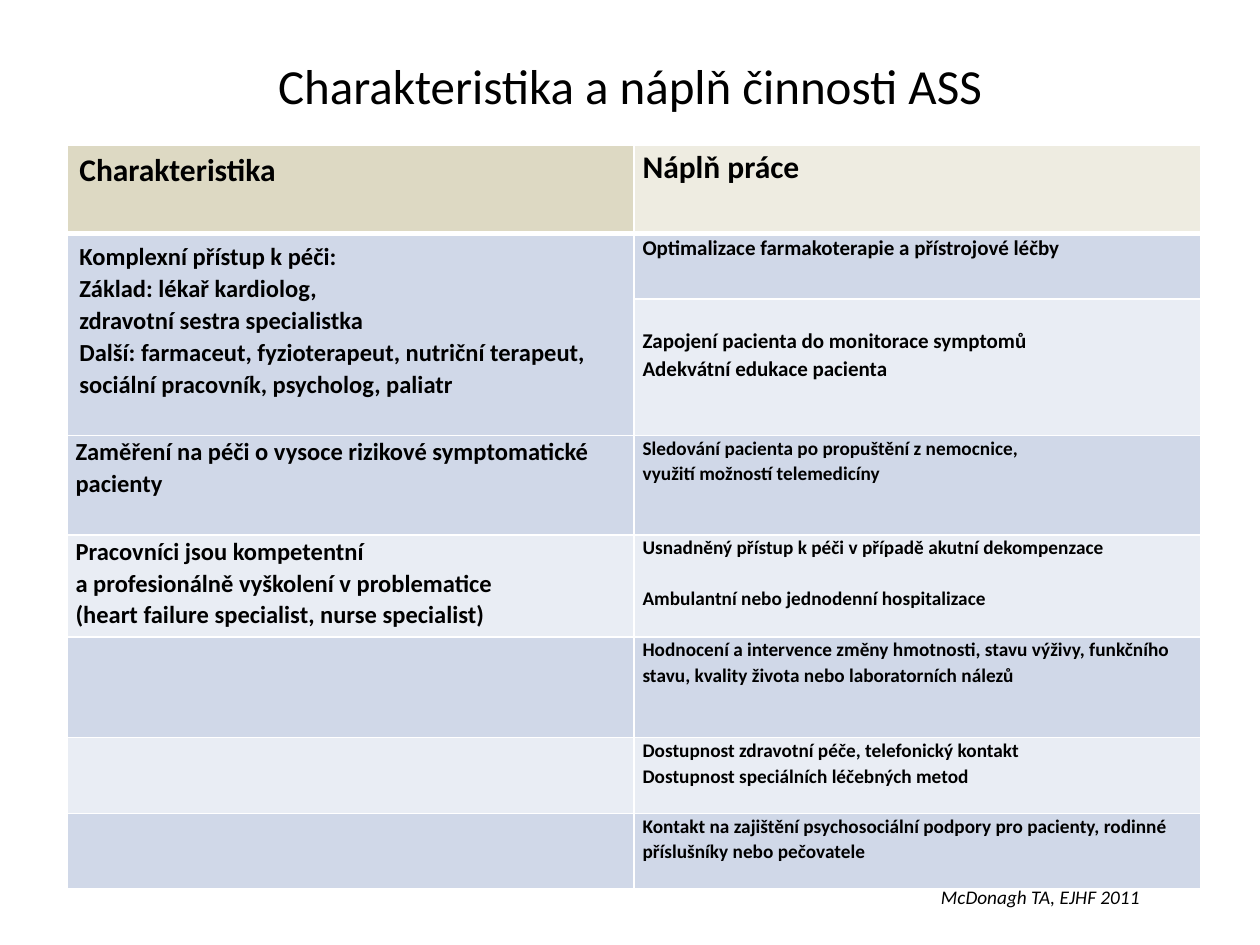
from dataclasses import dataclass

from lxml.etree import SubElement
from pptx import Presentation
from pptx.dml.color import RGBColor as RGB
from pptx.enum.text import MSO_ANCHOR as ANCHOR, PP_ALIGN as ALIGN
from pptx.oxml.ns import qn
from pptx.util import Inches, Pt


@dataclass(frozen=True)
class Theme:
    font: str = "Calibri"
    text: str = "000000"
    border: str = "FFFFFF"
    header: tuple = ("DDD9C3", "EEECE1")
    bands: tuple = ("D0D8E8", "E9EDF4")
    title: int = 28
    head: int = 18
    large: int = 14
    medium: int = 12
    small: int = 11
    leading: float = 1.07


@dataclass
class Entry:
    lines: tuple = ()
    size: int = Theme.small
    margins: tuple = (0.07, 0, 0.07, 0)  # left, top, right, bottom
    leading: float = Theme.leading
    gap: float = 0  # points between paragraphs


class Deck:
    def __init__(self, theme, width=10, height=7.5):
        self.theme = theme
        self.prs = Presentation()
        self.prs.slide_width, self.prs.slide_height = Inches(width), Inches(height)
        self.s = self.prs.slides.add_slide(self.prs.slide_layouts[5])

    def box(self, left, top, width, height):
        """Turn shares of the slide into lengths."""
        w, h = self.prs.slide_width, self.prs.slide_height
        return [int(n) for n in (left * w, top * h, width * w, height * h)]

    def set_text(self, tf, lines, size, leading=1.0, gap=0, align=None, **style):
        for i, line in enumerate(lines):
            p = tf.paragraphs[0] if i == 0 else tf.add_paragraph()
            layout = {"alignment": align, "line_spacing": leading,
                      "space_before": Pt(gap if i else 0)}
            for name, value in layout.items():
                setattr(p, name, value)
            r = p.add_run()
            r.text = line
            font = {"name": self.theme.font, "size": Pt(size), **style}
            for name, value in font.items():
                setattr(r.font, name, value)
            r.font.color.rgb = RGB.from_string(self.theme.text)

    def title(self, text, area):
        sp = self.s.shapes.title
        for name, value in zip(("left", "top", "width", "height"), self.box(*area)):
            setattr(sp, name, value)
        sp.text_frame.vertical_anchor = ANCHOR.MIDDLE
        self.set_text(sp.text_frame, [text], self.theme.title, align=ALIGN.CENTER)

    def caption(self, text, area):
        tf = self.s.shapes.add_textbox(*self.box(*area)).text_frame
        tf.word_wrap = True
        self.set_text(tf, [text], self.theme.small, italic=True)

    def borders(self, cell, widths):
        tc_pr = cell._tc.get_or_add_tcPr()
        for side, width in zip("LRTB", widths):
            ln = SubElement(tc_pr, qn(f"a:ln{side}"), w=str(Pt(width)))
            fill = SubElement(ln, qn("a:solidFill"))
            SubElement(fill, qn("a:srgbClr"), val=self.theme.border)

    def fill_cell(self, cell, entry, color, widths):
        self.borders(cell, widths)
        cell.fill.solid()
        cell.fill.fore_color.rgb = RGB.from_string(color)
        sides = ("margin_left", "margin_top", "margin_right", "margin_bottom")
        for side, value in zip(sides, entry.margins):
            setattr(cell, side, Inches(value))
        self.set_text(cell.text_frame, entry.lines, entry.size, entry.leading,
                      entry.gap, bold=True)

    def table(self, rows, heights, area, merges):
        shape = self.s.shapes.add_table(len(rows), len(rows[0]), *self.box(*area))
        table = shape.table
        for row, height in zip(table.rows, heights):
            row.height = Inches(height)
        for (top, left), (bottom, right) in merges:
            table.cell(top, left).merge(table.cell(bottom, right))
        for i, entries in enumerate(rows):
            # The header is set off by a thick rule; body rows alternate
            widths = (1, 1, 3 if i == 1 else 1, 3 if i == 0 else 1)
            band = self.theme.bands[(i - 1) % 2]
            for j, entry in enumerate(entries):
                color = band if i else self.theme.header[j]
                self.fill_cell(table.cell(i, j), entry, color, widths)


def main():
    theme = Theme()
    deck = Deck(theme)
    roomy = (0.1, 0.05, 0.1, 0.05)
    empty = Entry()

    # Title
    deck.title("Charakteristika a náplň činnosti ASS", (0.05, 0.04, 0.9, 0.1))

    # Team characteristics on the left, scope of work on the right
    rows = [
        (Entry(("Charakteristika",), theme.head, roomy, 1.0),
         Entry(("Náplň práce",), theme.head)),
        (Entry(("Komplexní přístup k péči:",
                "Základ: lékař kardiolog,",
                "zdravotní sestra specialistka",
                "Další: farmaceut, fyzioterapeut, nutriční terapeut,",
                "sociální pracovník, psycholog, paliatr"), theme.large, roomy),
         Entry(("Optimalizace farmakoterapie a přístrojové léčby",), theme.medium)),
        (empty,
         Entry(("Zapojení pacienta do monitorace symptomů",
                "Adekvátní edukace pacienta"), theme.medium, (0.07, 0.22, 0.07, 0))),
        (Entry(("Zaměření na péči o vysoce rizikové symptomatické pacienty",),
               theme.large),
         Entry(("Sledování pacienta po propuštění z nemocnice,",
                "využití možností telemedicíny"))),
        (Entry(("Pracovníci jsou kompetentní",
                "a profesionálně vyškolení v problematice",
                "(heart failure specialist, nurse specialist)"), theme.large),
         Entry(("Usnadněný přístup k péči v případě akutní dekompenzace",
                "Ambulantní nebo jednodenní hospitalizace"), gap=14.5)),
        (empty,
         Entry(("Hodnocení a intervence změny hmotnosti, stavu výživy, funkčního "
                "stavu, kvality života nebo laboratorních nálezů",))),
        (empty,
         Entry(("Dostupnost zdravotní péče, telefonický kontakt",
                "Dostupnost speciálních léčebných metod"))),
        (empty,
         Entry(("Kontakt na zajištění psychosociální podpory pro pacienty, rodinné "
                "příslušníky nebo pečovatele",))),
    ]
    heights = (0.7, 0.52, 1.08, 0.79, 0.81, 0.8, 0.6, 0.6)
    deck.table(rows, heights, (0.053, 0.154, 0.9, 0.787), [((1, 0), (2, 0))])

    # Source
    deck.caption("McDonagh TA, EJHF 2011", (0.737, 0.93, 0.213, 0.04))

    deck.prs.save("out.pptx")


if __name__ == "__main__":
    main()
